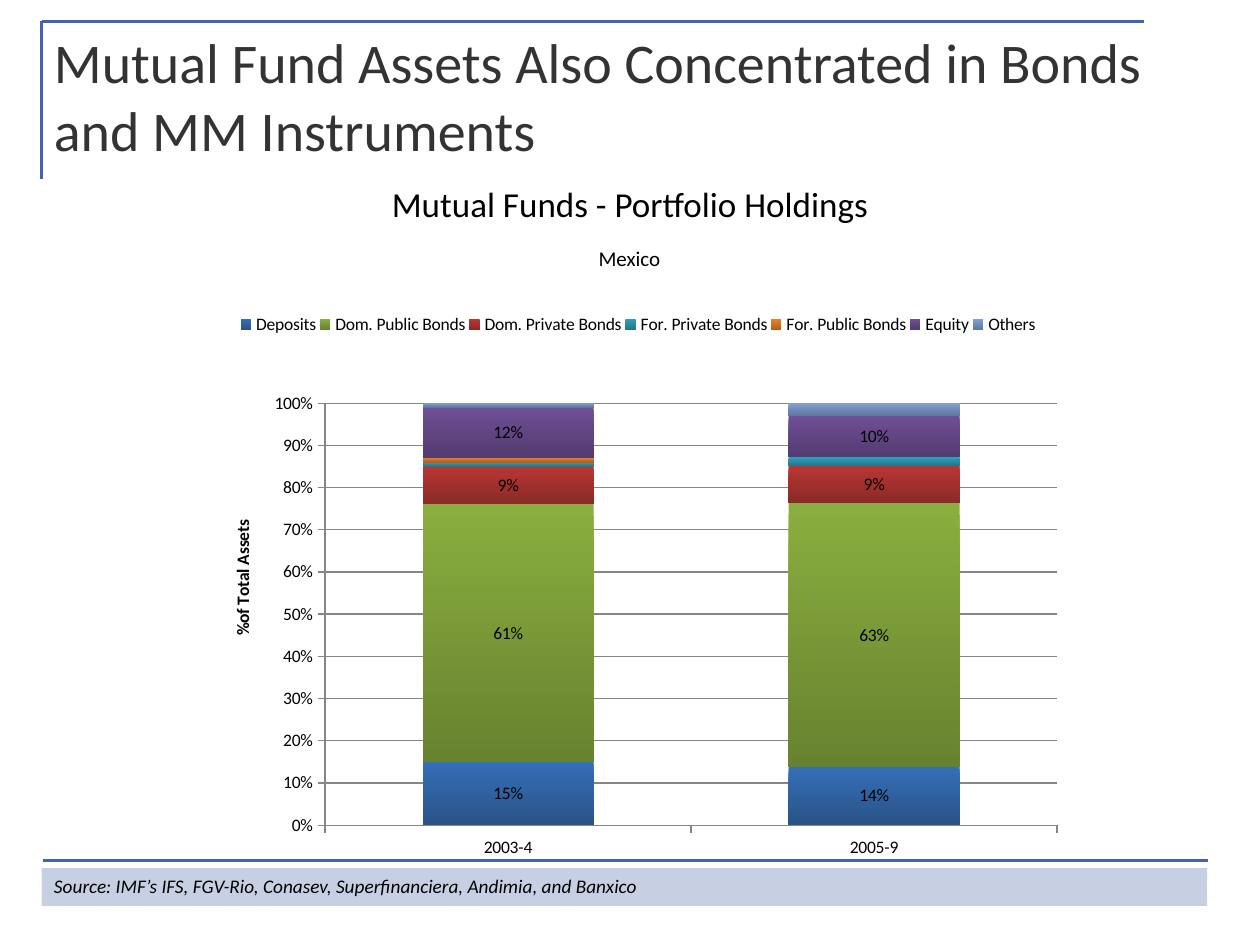
from lxml import etree
from pptx import Presentation
from pptx.chart.data import CategoryChartData
from pptx.dml.color import RGBColor
from pptx.enum.chart import XL_CHART_TYPE, XL_LABEL_POSITION, XL_LEGEND_POSITION, XL_TICK_MARK
from pptx.enum.shapes import MSO_CONNECTOR, MSO_SHAPE
from pptx.enum.text import MSO_ANCHOR, PP_ALIGN
from pptx.oxml.ns import qn
from pptx.util import Inches, Pt

STACKED = XL_CHART_TYPE.COLUMN_STACKED_100
LABEL_CENTER = XL_LABEL_POSITION.CENTER
LEGEND_TOP = XL_LEGEND_POSITION.TOP
TICK_OUTSIDE = XL_TICK_MARK.OUTSIDE
STRAIGHT = MSO_CONNECTOR.STRAIGHT
RECTANGLE = MSO_SHAPE.RECTANGLE
TOP, MIDDLE = MSO_ANCHOR.TOP, MSO_ANCHOR.MIDDLE
LEFT, CENTER = PP_ALIGN.LEFT, PP_ALIGN.CENTER

COLUMNS, ROWS = 100, 75
COLORS = {"rule": "4264B0", "band": "C7D0E3", "title": "333333", "text": "000000", "axis": "868686"}
PERIODS = ["2003-4", "2005-9"]
HOLDINGS = [
    ("Deposits", (0.15, 0.14), ("356FB8", "295387"), True),
    ("Dom. Public Bonds", (0.61, 0.63), ("8AAE3F", "67832F"), True),
    ("Dom. Private Bonds", (0.09, 0.09), ("B83633", "8A2A28"), True),
    ("For. Private Bonds", (0.01, 0.02), ("2F9DB9", "24778B"), False),
    ("For. Public Bonds", (0.01, 0), ("EE7D25", "B55F1C"), False),
    ("Equity", (0.12, 0.1), ("6F4F96", "533B70"), True),
    ("Others", (0.01, 0.03), ("84A0D0", "6078A0"), False),
]


def place(element, index, **shares):
    """Give a chart part a manual layout in shares of the chart."""
    for old in element.findall(qn("c:layout")):
        element.remove(old)
    layout = etree.Element(qn("c:layout"))
    manual = etree.SubElement(layout, qn("c:manualLayout"))
    if "w" in shares:
        etree.SubElement(manual, qn("c:layoutTarget"), val="inner")
    for mode in ("xMode", "yMode"):
        etree.SubElement(manual, qn("c:" + mode), val="edge")
    for key, share in shares.items():
        etree.SubElement(manual, qn("c:" + key), val=str(share))
    element.insert(index, layout)


class SlideBuilder:
    """Holds the style, the grid and the current slide."""

    def __init__(self, presentation, font="Calibri"):
        self.slide = presentation.slides.add_slide(presentation.slide_layouts[6])
        self.column = presentation.slide_width / COLUMNS
        self.row = presentation.slide_height / ROWS
        self.font = font

    def box(self, left, top, width, height):
        return (round(left * self.column), round(top * self.row),
                round(width * self.column), round(height * self.row))

    def style(self, font, size, color="text", bold=False, italic=False):
        font.name, font.size, font.bold, font.italic = self.font, Pt(size), bold, italic
        font.color.rgb = RGBColor.from_string(COLORS[color])

    def set_text(self, shape, text, size, color="text", align=LEFT, anchor=TOP, wrap=True, italic=False):
        frame = shape.text_frame
        frame.word_wrap, frame.vertical_anchor = wrap, anchor
        paragraph = frame.paragraphs[0]
        paragraph.text, paragraph.alignment = text, align
        self.style(paragraph.font, size, color, italic=italic)

    def text(self, box, text, size, **options):
        self.set_text(self.slide.shapes.add_textbox(*self.box(*box)), text, size, **options)

    def band(self, box, text, size, **options):
        shape = self.slide.shapes.add_shape(RECTANGLE, *self.box(*box))
        shape.shadow.inherit = False
        shape.fill.solid()
        shape.fill.fore_color.rgb = RGBColor.from_string(COLORS["band"])
        shape.line.fill.background()
        self.set_text(shape, text, size, **options)

    def rule(self, start, end):
        points = self.box(*start, *end)
        connector = self.slide.shapes.add_connector(STRAIGHT, *points)
        connector.line.color.rgb = RGBColor.from_string(COLORS["rule"])
        connector.line.width = Pt(1.5)
        etree.SubElement(connector._element.spPr, qn("a:effectLst"))

    def chart(self, box, periods, holdings, axis_title):
        data = CategoryChartData(number_format="0%")
        data.categories = periods
        for name, values, *_ in holdings:
            data.add_series(name, values)
        chart = self.slide.shapes.add_chart(STACKED, *self.box(*box), data).chart
        chart.has_title = False
        self.style(chart.font, 10)
        plot = chart.plots[0]
        plot.gap_width, plot.overlap, plot.vary_by_categories = 114, 100, False
        place(chart._chartSpace.chart.plotArea, 0, x=0.13, y=0.19, w=0.83, h=0.67)
        for series, (_, _, shades, labelled) in zip(plot.series, holdings):
            self.paint(series, shades, labelled)
        self.axes(chart, axis_title)
        chart.has_legend = True
        chart.legend.position = LEGEND_TOP
        chart.legend.include_in_layout = False
        self.style(chart.legend.font, 10)
        place(chart.legend._element, 1, x=0.03, y=0.04, w=0.91, h=0.05)

    def paint(self, series, shades, labelled):
        fill = series.format.fill
        fill.gradient()
        fill.gradient_angle = 270
        for stop, shade in zip(fill.gradient_stops, shades):
            stop.color.rgb = RGBColor.from_string(shade)
        if labelled:
            labels = series.data_labels
            labels.show_value, labels.position = True, LABEL_CENTER
            labels.number_format, labels.number_format_is_linked = "0%", False
            self.style(labels.font, 10)

    def axes(self, chart, title):
        value_axis = chart.value_axis
        value_axis.has_major_gridlines = True
        value_axis.minimum_scale, value_axis.maximum_scale, value_axis.major_unit = 0, 1, 0.1
        value_axis.tick_labels.number_format = "0%"
        value_axis.tick_labels.number_format_is_linked = False
        for axis in (chart.category_axis, value_axis):
            axis.major_tick_mark = TICK_OUTSIDE
            self.style(axis.tick_labels.font, 10)
        for part in (chart.category_axis, value_axis, value_axis.major_gridlines):
            part.format.line.color.rgb = RGBColor.from_string(COLORS["axis"])
            part.format.line.width = Pt(0.75)
        paragraph = value_axis.axis_title.text_frame.paragraphs[0]
        paragraph.text = title
        self.style(paragraph.font, 10, bold=True)
        place(value_axis.axis_title._element, 1, x=0.02, y=0.37)


def main():
    presentation = Presentation()
    presentation.slide_width, presentation.slide_height = Inches(10), Inches(7.5)
    builder = SlideBuilder(presentation)
    builder.rule((3.3, 1.7), (90.8, 1.7))
    builder.rule((3.3, 1.7), (3.3, 14.2))
    builder.rule((3.4, 68.3), (95.9, 68.3))
    builder.text((29.9, 14, 40.2, 4.4), "Mutual Funds - Portfolio Holdings", 20, align=CENTER, wrap=False)
    builder.text((46.4, 19, 7.1, 3), "Mexico", 12, align=CENTER, wrap=False)
    builder.chart((16.7, 22.5, 70, 50), PERIODS, HOLDINGS, "%of Total Assets")
    builder.text((3.3, 1.7, 95, 11.7), "Mutual Fund Assets Also Concentrated in Bonds and MM Instruments",
                 32, color="title", anchor=MIDDLE)
    builder.band((3.3, 68.9, 92.5, 3), "Source: IMF’s IFS, FGV-Rio, Conasev, Superfinanciera, Andimia, and Banxico",
                 11, italic=True)
    presentation.save("out.pptx")


if __name__ == "__main__":
    main()
